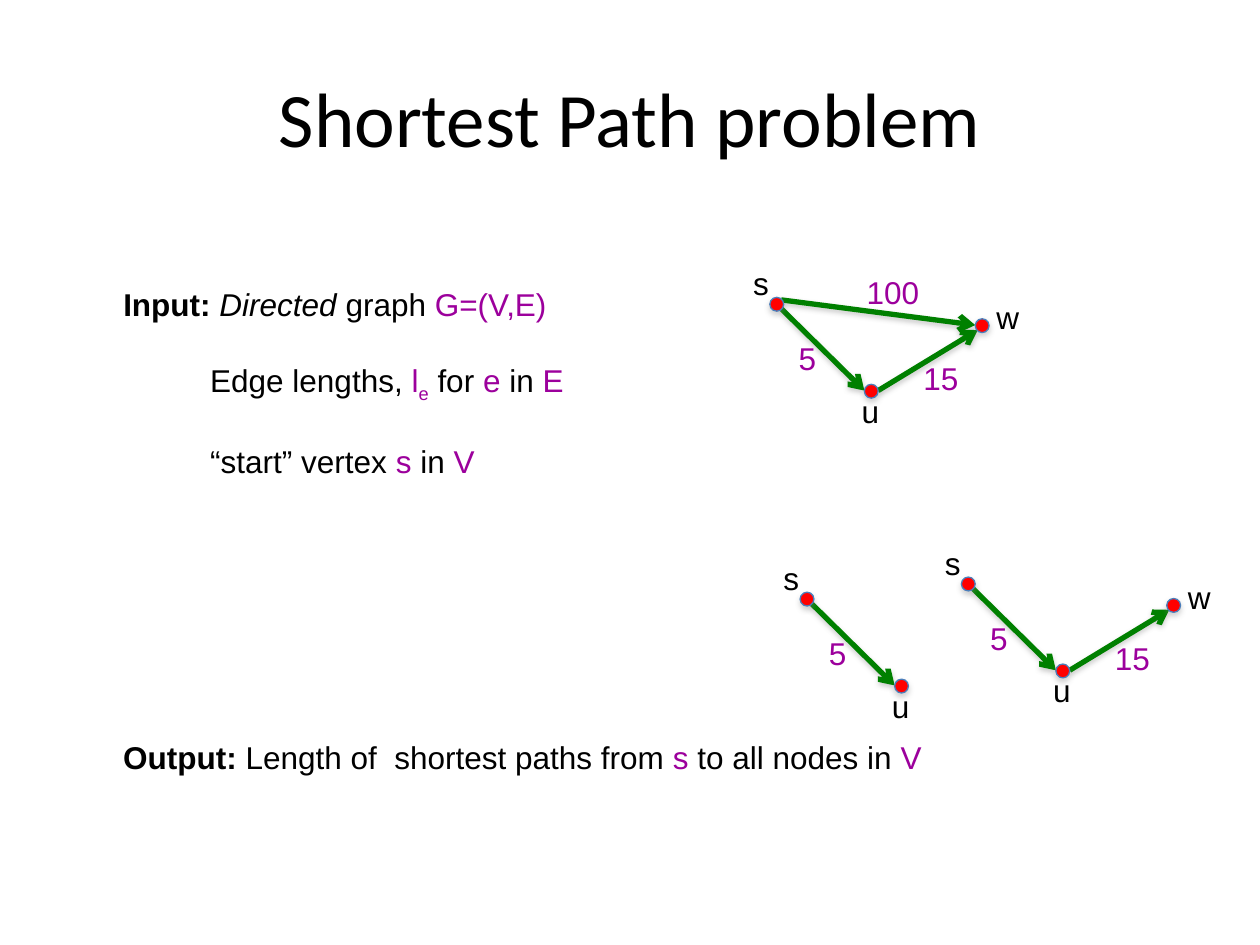
from lxml.etree import SubElement
from pptx import Presentation
from pptx.dml.color import RGBColor
from pptx.enum.shapes import MSO_CONNECTOR as Connector, MSO_SHAPE as Shape
from pptx.enum.text import MSO_ANCHOR as Anchor, PP_ALIGN as Align
from pptx.oxml.ns import qn
from pptx.util import Inches, Pt

COLORS = {
    "text": "000000",
    "math": "9C009C",
    "edge": "008000",
    "node": "FF0000",
    "outline": "4A7EBB",
    "shadow": "808080",
}
NODE_SIZE = 0.11
NODES = {
    "s": {"at": (0, 0), "label": (-0.23, -0.31), "width": 0.33},
    "u": {"at": (0.75, 0.69), "label": (0.63, 0.7), "width": 0.34},
    "w": {"at": (1.63, 0.17), "label": (1.7, -0.04), "width": 0.41},
}
EDGES = {
    "su": {"start": (0.09, 0.09), "end": (0.75, 0.74), "length": "5",
           "label": (0.13, 0.28), "size": (0.31, 0.71)},
    "uw": {"start": (0.86, 0.74), "end": (1.65, 0.26), "length": "15",
           "label": (1.12, 0.44), "size": (0.48, 0.4)},
}
GRAPHS = [
    ((6.11, 2.36), "suw", ("su", "uw")),
    ((6.35, 4.7), "su", ("su",)),
    ((7.63, 4.58), "suw", ("su", "uw")),
]
INPUT = [
    [("Input: ", "text", "bold"), ("Directed", "text", "italic"),
     (" graph ", "text"), ("G=(V,E)", "math")],
    [("Edge lengths, ", "text"), ("l", "math"), ("e", "math", "subscript"),
     (" for ", "text"), ("e", "math"), (" in ", "text"), ("E", "math")],
    [("“start” vertex ", "text"), ("s", "math"), (" in ", "text"), ("V", "math")],
]
OUTPUT = [
    [("Output: ", "text", "bold"), ("Length of  shortest paths from ", "text"),
     ("s", "math"), (" to all nodes in ", "text"), ("V", "math")],
]


class GraphSlide:
    """Draws text and directed graphs on one slide in a shared style."""

    def __init__(self, slide):
        self.slide = slide
        self.shapes = slide.shapes

    def color(self, name):
        return RGBColor.from_string(COLORS[name])

    def text(self, position, size, paragraphs, font="Arial", points=18,
             align=Align.LEFT, anchor=Anchor.TOP, wrap=False, indent=0, gap=0):
        box = self.shapes.add_textbox(*map(Inches, (*position, *size)))
        frame = box.text_frame
        frame.word_wrap = wrap
        frame.vertical_anchor = anchor
        for index, runs in enumerate(paragraphs):
            paragraph = frame.add_paragraph() if index else frame.paragraphs[0]
            paragraph.alignment = align
            if index:
                paragraph.space_before = Pt(gap)
                paragraph._p.get_or_add_pPr().set("marL", str(Inches(indent)))
            for words, color, *styles in runs:
                run = paragraph.add_run()
                run.text = words
                run.font.name = font
                run.font.size = Pt(points)
                run.font.color.rgb = self.color(color)
                run.font.bold = "bold" in styles
                run.font.italic = "italic" in styles
                if "subscript" in styles:
                    run.font._element.set("baseline", "-25000")

    def shadow(self, shape, opacity, distance):
        properties = shape.element.spPr
        effects = properties.find(qn("a:effectLst"))
        if effects is None:
            effects = SubElement(properties, qn("a:effectLst"))
        outer = SubElement(effects, qn("a:outerShdw"), blurRad=str(Pt(3.1)),
                           dist=str(Pt(distance)), dir="5400000", rotWithShape="0")
        color = SubElement(outer, qn("a:srgbClr"), val=COLORS["shadow"])
        SubElement(color, qn("a:alpha"), val=str(opacity * 1000))

    def node(self, position):
        node = self.shapes.add_shape(
            Shape.OVAL, *map(Inches, (*position, NODE_SIZE, NODE_SIZE)))
        node.fill.solid()
        node.fill.fore_color.rgb = self.color("node")
        node.line.color.rgb = self.color("outline")
        node.line.width = Pt(0.75)
        node.shadow.inherit = False
        self.shadow(node, 35, 1.8)

    def edge(self, start, end):
        edge = self.shapes.add_connector(
            Connector.STRAIGHT, *map(Inches, (*start, *end)))
        edge.line.color.rgb = self.color("edge")
        edge.line.width = Pt(3)
        SubElement(edge.line._get_or_add_ln(), qn("a:tailEnd"), type="arrow")
        self.shadow(edge, 38, 1.6)

    def graph(self, origin, nodes, edges):
        def place(offset):
            return origin[0] + offset[0], origin[1] + offset[1]

        self.shapes = self.slide.shapes.add_group_shape().shapes
        for name in edges:
            edge = EDGES[name]
            self.edge(place(edge["start"]), place(edge["end"]))
            self.text(place(edge["label"]), edge["size"],
                      [[(edge["length"], "math")]])
        for name in nodes:
            node = NODES[name]
            self.node(place(node["at"]))
            self.text(place(node["label"]), (node["width"], 0.4),
                      [[(name, "text")]])
        self.shapes = self.slide.shapes


def main():
    presentation = Presentation()
    presentation.slide_width = Inches(10)
    presentation.slide_height = Inches(7.5)
    page = GraphSlide(presentation.slides.add_slide(presentation.slide_layouts[6]))

    page.text((0.5, 0.3), (9, 1.25), [[("Shortest Path problem", "text")]],
              font="Calibri", points=44, align=Align.CENTER,
              anchor=Anchor.MIDDLE, wrap=True)
    page.text((0.88, 2.21), (3.75, 1.61), INPUT, wrap=True, indent=0.69, gap=22)
    page.text((0.88, 5.81), (6.6, 0.4), OUTPUT)
    page.edge((6.2, 2.38), (7.74, 2.58))
    page.text((6.78, 2.12), (0.62, 0.4), [[("100", "math")]])
    for origin, nodes, edges in GRAPHS:
        page.graph(origin, nodes, edges)

    presentation.save("out.pptx")


if __name__ == "__main__":
    main()
